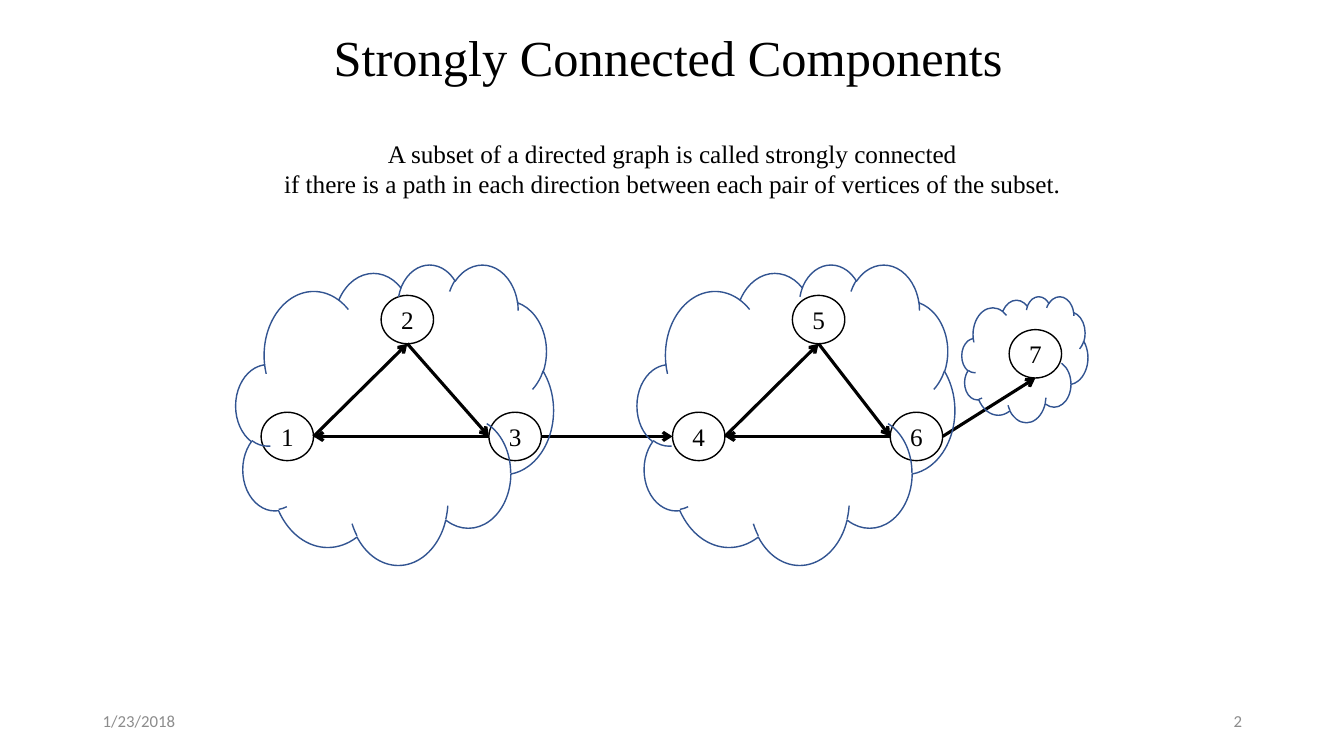
from dataclasses import dataclass

from lxml import etree
from pptx import Presentation
from pptx import util as u
from pptx.dml.color import RGBColor
from pptx.enum import shapes, text
from pptx.oxml.ns import qn

WIDTH, HEIGHT = u.Inches(13.33), u.Inches(7.5)
SERIF, SANS = "Times New Roman", "Calibri"
BLACK, GRAY, BLUE = "000000", "8C8C8C", "325491"


@dataclass(frozen=True)
class Area:
    """A rectangle in percent of the slide's width and height."""
    left: float
    top: float
    width: float
    height: float

    def emu(self) -> tuple[int, int, int, int]:
        return (across(self.left), down(self.top),
                across(self.width), down(self.height))

    def side(self, name: str) -> tuple[int, int]:
        x, y = {"left": (0, 0.5), "right": (1, 0.5), "bottom": (0.5, 1)}[name]
        return (across(self.left + x * self.width),
                down(self.top + y * self.height))


@dataclass(frozen=True)
class Edge:
    start: int
    start_side: str
    end: int
    end_side: str


@dataclass(frozen=True)
class Label:
    words: str
    area: Area
    size: float
    font: str
    color: str
    align: text.PP_ALIGN
    anchor: text.MSO_ANCHOR
    wrap: bool = False


def across(percent: float) -> int:
    return round(WIDTH * percent / 100)


def down(percent: float) -> int:
    return round(HEIGHT * percent / 100)


def rgb(color: str) -> RGBColor:
    return RGBColor.from_string(color)


def vertex(left: float, top: float) -> Area:
    return Area(left, top, 3.9, 6.4)


def write(box, label: Label) -> None:
    frame = box.text_frame
    frame.text = label.words
    frame.word_wrap = label.wrap
    frame.auto_size = text.MSO_AUTO_SIZE.NONE
    frame.vertical_anchor = label.anchor
    for para in frame.paragraphs:
        para.alignment = label.align
        for span in para.runs:
            span.font.size = u.Pt(label.size)
            span.font.name = label.font
            span.font.color.rgb = rgb(label.color)


def draw_label(page, label: Label) -> None:
    write(page.shapes.add_textbox(*label.area.emu()), label)


def draw_outline(page, kind: shapes.MSO_SHAPE, area: Area, color: str):
    shape = page.shapes.add_shape(kind, *area.emu())
    shape.shadow.inherit = False
    shape.fill.background()
    shape.line.color.rgb = rgb(color)
    shape.line.width = u.Pt(1)
    return shape


def draw_vertex(page, number: int, area: Area) -> None:
    circle = draw_outline(page, shapes.MSO_SHAPE.OVAL, area, BLACK)
    write(circle, Label(str(number), area, 18, SERIF, BLACK,
                        text.PP_ALIGN.CENTER, text.MSO_ANCHOR.MIDDLE))
    frame = circle.text_frame
    frame.margin_left = frame.margin_right = 0
    frame.margin_top = frame.margin_bottom = 0


def draw_edge(page, edge: Edge) -> None:
    arrow = page.shapes.add_connector(
        shapes.MSO_CONNECTOR.STRAIGHT,
        *VERTICES[edge.start].side(edge.start_side),
        *VERTICES[edge.end].side(edge.end_side))
    arrow.line.color.rgb = rgb(BLACK)
    arrow.line.width = u.Pt(2.25)
    etree.SubElement(arrow.line._get_or_add_ln(), qn("a:tailEnd"), type="arrow")
    etree.SubElement(arrow._element.spPr, qn("a:effectLst"))


# Vertices by number, and the directed edges between them
VERTICES = {
    1: vertex(19.43, 54.53), 2: vertex(28.36, 39.07), 3: vertex(36.38, 54.53),
    4: vertex(50.04, 54.53), 5: vertex(58.96, 39.07), 6: vertex(66.24, 54.53),
    7: vertex(75.09, 43.6),
}


def triangle(first: int) -> list[Edge]:
    return [Edge(first, "right", first + 1, "bottom"),
            Edge(first + 1, "bottom", first + 2, "left"),
            Edge(first + 2, "left", first, "right")]


EDGES = [*triangle(1), Edge(3, "right", 4, "left"),
         *triangle(4), Edge(6, "right", 7, "bottom")]

# One cloud around each strongly connected component
CLOUDS = [Area(17.55, 34.93, 23.63, 39.73), Area(47.41, 34.93, 23.63, 39.73),
          Area(71.57, 39.2, 9.38, 16.67)]

TITLE = Label("Strongly Connected Components", Area(24.08, 2.8, 51.84, 9.47),
              36, SERIF, BLACK, text.PP_ALIGN.LEFT, text.MSO_ANCHOR.TOP)
DEFINITION = Label(
    "A subset of a directed graph is called strongly connected\n"
    "if there is a path in each direction between each pair of vertices"
    " of the subset.",
    Area(20.33, 17.6, 59.41, 9.47), 18, SERIF, BLACK,
    text.PP_ALIGN.CENTER, text.MSO_ANCHOR.TOP)
FOOTERS = [
    Label(words, Area(left, 92.67, 22.5, 5.33), 12, SANS, GRAY, align,
          text.MSO_ANCHOR.MIDDLE, wrap=True)
    for words, left, align in (("1/23/2018", 6.9, text.PP_ALIGN.LEFT),
                               ("2", 70.67, text.PP_ALIGN.RIGHT))]


def main() -> None:
    deck = Presentation()
    deck.slide_width, deck.slide_height = WIDTH, HEIGHT
    page = deck.slides.add_slide(deck.slide_layouts.get_by_name("Title Only"))

    # Title
    title = page.shapes.title
    title.left, title.top, title.width, title.height = TITLE.area.emu()
    write(title, TITLE)

    # Graph
    for number, area in VERTICES.items():
        draw_vertex(page, number, area)
    for edge in EDGES:
        draw_edge(page, edge)
    for area in CLOUDS:
        draw_outline(page, shapes.MSO_SHAPE.CLOUD, area, BLUE)

    # Definition, date and page number
    for label in (DEFINITION, *FOOTERS):
        draw_label(page, label)

    deck.save("out.pptx")


if __name__ == "__main__":
    main()
